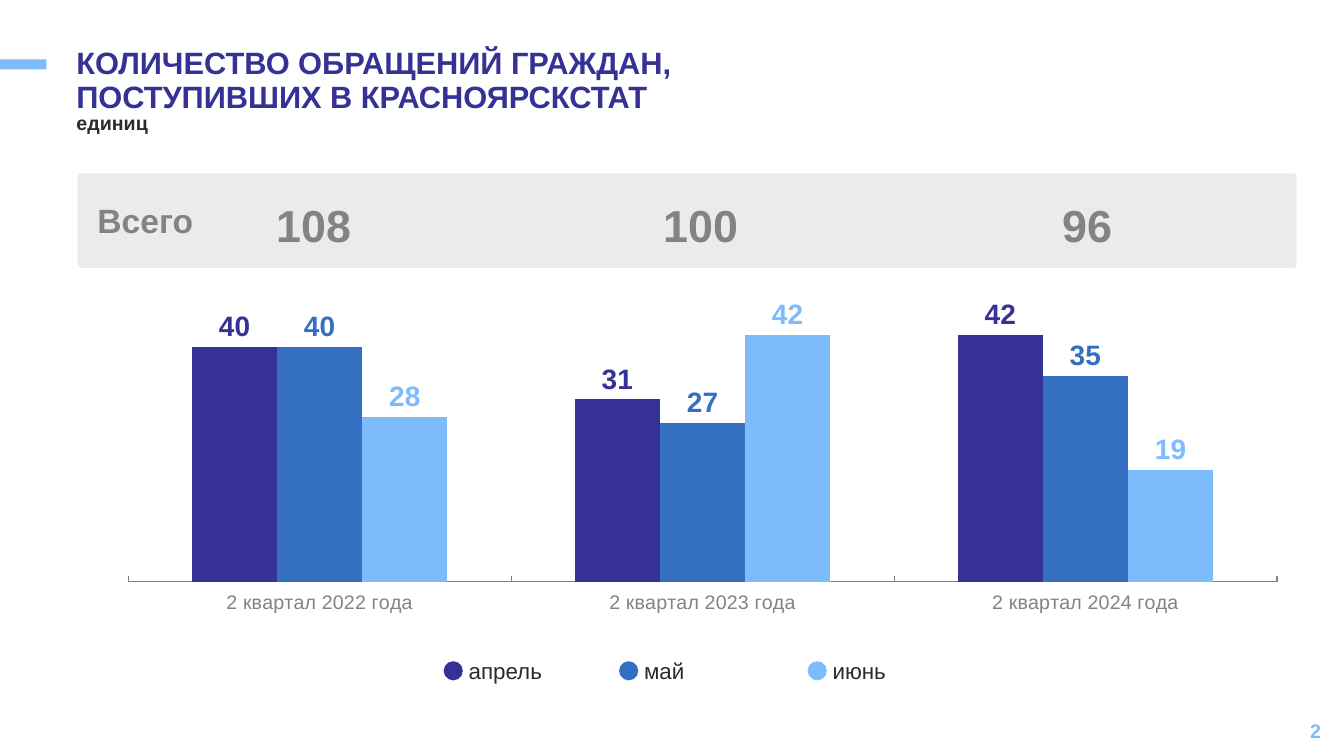
from pptx import Presentation
from pptx.chart.data import CategoryChartData
from pptx.dml.color import RGBColor
from pptx.enum.chart import XL_CHART_TYPE, XL_LABEL_POSITION, XL_TICK_LABEL_POSITION, XL_TICK_MARK
from pptx.enum.shapes import MSO_SHAPE
from pptx.enum.text import MSO_ANCHOR, PP_ALIGN
from pptx.oxml import parse_xml
from pptx.oxml.ns import nsdecls
from pptx.util import Inches, Pt

WIDTH, HEIGHT = 13.33, 7.5
FONT = "Arial"
NAVY = RGBColor(0x36, 0x31, 0x94)
BLUE = RGBColor(0x34, 0x6F, 0xC2)
SKY = RGBColor(0x7D, 0xBB, 0xFC)
INK = RGBColor(0x28, 0x2A, 0x2E)
GREY = RGBColor(0x83, 0x83, 0x83)
PALE = RGBColor(0xEB, 0xEB, 0xEB)

COLUMN = XL_CHART_TYPE.COLUMN_CLUSTERED
OUTSIDE = XL_LABEL_POSITION.OUTSIDE_END
LOW = XL_TICK_LABEL_POSITION.LOW
INWARD = XL_TICK_MARK.INSIDE
RECT, ROUND, OVAL = MSO_SHAPE.RECTANGLE, MSO_SHAPE.ROUNDED_RECTANGLE, MSO_SHAPE.OVAL
TOP, MIDDLE = MSO_ANCHOR.TOP, MSO_ANCHOR.MIDDLE
LEFT, CENTER, RIGHT = PP_ALIGN.LEFT, PP_ALIGN.CENTER, PP_ALIGN.RIGHT

YEARS = ["2 квартал 2022 года", "2 квартал 2023 года", "2 квартал 2024 года"]
MONTHS = [
    ("апрель", (40, 31, 42), NAVY),
    ("май", (40, 27, 35), BLUE),
    ("июнь", (28, 42, 19), SKY),
]


def add_text(slide, box, lines, size, color, bold=True, align=LEFT,
             anchor=TOP, spacing=1.0, wrap=True):
    frame = slide.shapes.add_textbox(*map(Inches, box)).text_frame
    frame.word_wrap = wrap
    frame.vertical_anchor = anchor
    para = frame.paragraphs[0]
    para.alignment = align
    para.line_spacing = spacing
    for i, line in enumerate(lines):
        if i:
            para.add_line_break()
        run = para.add_run()
        run.text = line
        font = run.font
        font.name, font.size, font.bold = FONT, Pt(size), bold
        font.color.rgb = color


def add_block(slide, kind, box, color):
    block = slide.shapes.add_shape(kind, *map(Inches, box))
    block.shadow.inherit = False
    block.fill.solid()
    block.fill.fore_color.rgb = color
    block.line.fill.background()
    return block


def add_header(slide, box):
    left, top, width, height = box
    add_block(slide, RECT, (0, top + 0.16, left - 0.2, 0.1), SKY)
    title = ["КОЛИЧЕСТВО ОБРАЩЕНИЙ ГРАЖДАН,", "ПОСТУПИВШИХ В КРАСНОЯРСКСТАТ"]
    add_text(slide, (left, top, width, 0.57), title, 22, NAVY, spacing=0.9)
    add_text(slide, (left, top + height - 0.4, width, 0.4), ["единиц"],
             14, INK, spacing=0.9)


def add_totals(slide, box):
    left, top, width, height = box
    add_block(slide, ROUND, box, PALE).adjustments[0] = 0.038
    add_text(slide, (left, top + 0.21, width / 9, 0.57), ["Всего"],
             24, GREY, align=CENTER)
    for i in range(len(YEARS)):
        total = sum(values[i] for _, values, _ in MONTHS)
        spot = (left + 0.95 + i * 3.835, top + 0.19, 2.79, 0.55)
        add_text(slide, spot, [str(total)], 32, GREY, align=CENTER)


def fix_plot(chart, x, y, w, h):
    """Pin the inner plot area, in shares of the chart."""
    area = chart._chartSpace.chart.plotArea
    for old in area.findall("{*}layout"):
        area.remove(old)
    area.insert(0, parse_xml(
        f'<c:layout {nsdecls("c")}><c:manualLayout><c:layoutTarget val="inner"/>'
        '<c:xMode val="edge"/><c:yMode val="edge"/>'
        f'<c:x val="{x}"/><c:y val="{y}"/><c:w val="{w}"/><c:h val="{h}"/>'
        '</c:manualLayout></c:layout>'))


def add_columns(slide, box):
    data = CategoryChartData()
    data.categories = YEARS
    for name, values, _ in MONTHS:
        data.add_series(name, values)
    chart = slide.shapes.add_chart(COLUMN, *map(Inches, box), data).chart
    chart.has_legend = chart.has_title = False
    chart.font.name, chart.font.size = FONT, Pt(18)
    chart.font.color.rgb = INK
    fix_plot(chart, 0.013, 0.295, 0.973, 0.606)

    scale = chart.value_axis
    scale.minimum_scale, scale.maximum_scale = 0, 45
    scale.has_major_gridlines = False
    scale.visible = False
    axis = chart.category_axis
    axis.major_tick_mark = INWARD
    axis.tick_label_position = LOW
    axis.format.line.color.rgb = GREY
    font = axis.tick_labels.font
    font.name, font.size = FONT, Pt(14)
    font.color.rgb = GREY

    plot = chart.plots[0]
    plot.gap_width, plot.overlap = 150, 0
    plot.vary_by_categories = False
    for series, (_, _, color) in zip(plot.series, MONTHS):
        series.format.fill.solid()
        series.format.fill.fore_color.rgb = color
        labels = series.data_labels
        labels.show_value = True
        labels.position = OUTSIDE
        font = labels.font
        font.name, font.size, font.bold = FONT, Pt(20), True
        font.color.rgb = color


def add_legend(slide, box):
    left, top, width, height = box
    for (name, _, color), shift in zip(MONTHS, (0, 1.74, 3.61)):
        x = left + shift
        add_block(slide, OVAL, (x, top + 0.09, 0.19, 0.19), color)
        add_text(slide, (x + 0.15, top, 0.94, height), [name], 16, INK,
                 bold=False, wrap=False)


def main():
    deck = Presentation()
    deck.slide_width, deck.slide_height = Inches(WIDTH), Inches(HEIGHT)
    slide = deck.slides.add_slide(deck.slide_layouts[6])
    add_header(slide, (0.66, 0.43, WIDTH * 0.65, 1.05))
    add_totals(slide, (0.77, 1.72, 12.09, HEIGHT / 8))
    add_columns(slide, (1.12, 1.87, 11.71, 4.33))
    add_legend(slide, (4.4, 6.47, 4.51, 0.37))
    add_text(slide, (WIDTH - 3.13, HEIGHT - 0.45, 3, 0.4), ["2"], 14, SKY,
             align=RIGHT, anchor=MIDDLE)
    deck.save("out.pptx")


if __name__ == "__main__":
    main()
